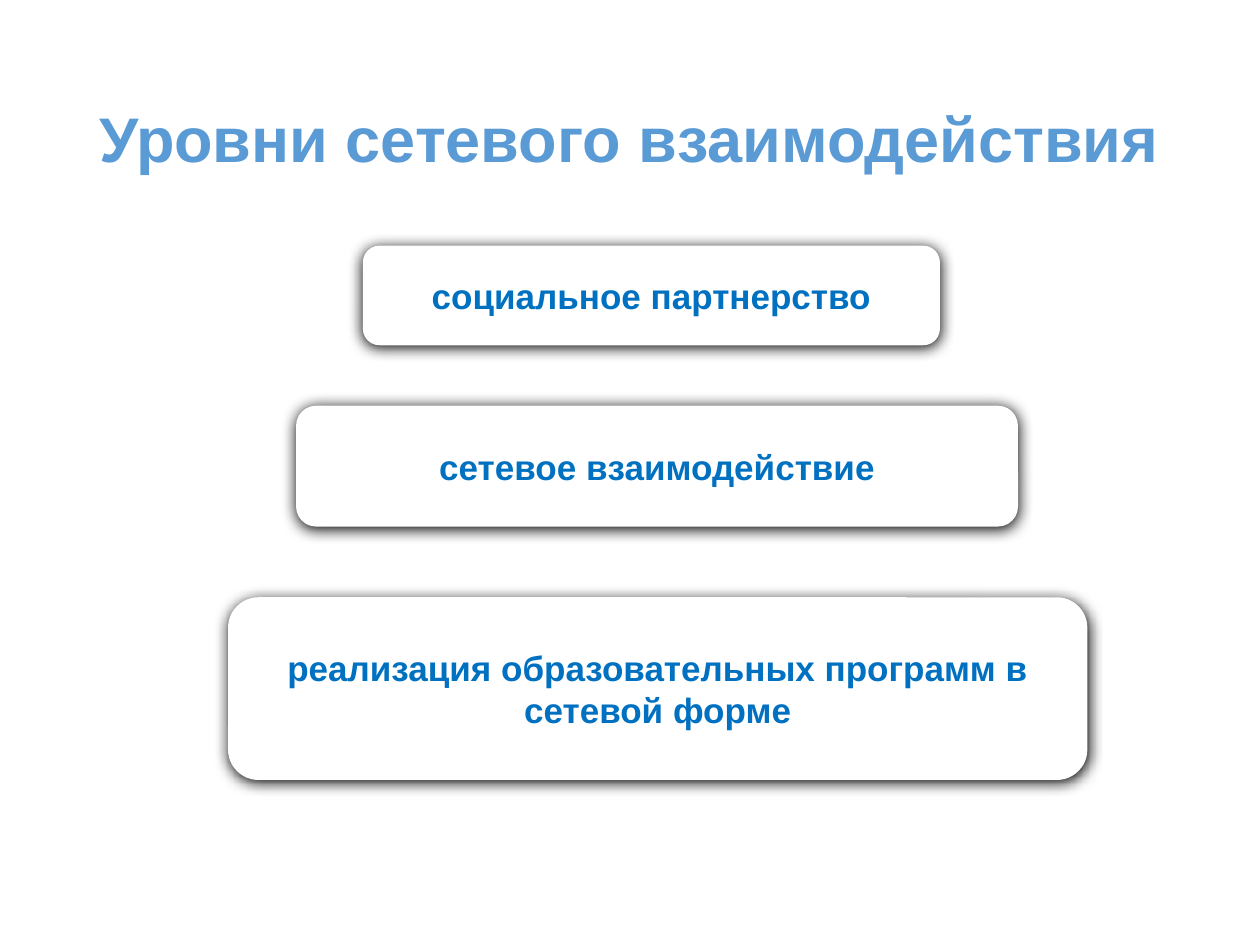
from lxml import etree
from pptx import Presentation
from pptx.dml.color import RGBColor
from pptx.enum.shapes import MSO_SHAPE as Shape
from pptx.enum.text import MSO_ANCHOR as Anchor, PP_ALIGN as Align
from pptx.oxml import parse_xml
from pptx.oxml.ns import nsdecls
from pptx.util import Inches, Pt

WHITE = RGBColor(0xFF, 0xFF, 0xFF)
TITLE_BLUE = RGBColor(0x5B, 0x9B, 0xD5)
LEVEL_BLUE = RGBColor(0x00, 0x70, 0xC0)

# Content: heading, then levels with left, top, width, height in inches
HEADING = "Уровни сетевого взаимодействия"
HEADING_BOX = (0.69, 0.4, 8.62, 1.45)
LEVELS = [
    ("социальное партнерство", (2.88, 1.95, 4.58, 0.79)),
    ("сетевое взаимодействие", (2.35, 3.22, 5.73, 0.96)),
    ("реализация образовательных программ в сетевой форме",
     (1.81, 4.74, 6.82, 1.45)),
]
HEADING_FONT = {"name": "Arial", "size": Pt(36), "bold": True}
LEVEL_FONT = {"name": "Arial", "size": Pt(20), "bold": True}

SHADOW = (
    f'<a:effectLst {nsdecls("a")}>'
    f'<a:outerShdw blurRad="{Pt(8.5)}" dist="{Pt(1)}" dir="5400000" '
    'algn="t" rotWithShape="0"><a:srgbClr val="000000"/></a:outerShdw>'
    '</a:effectLst>'
)


def write_text(shape, text, font_values, color, align):
    frame = shape.text_frame
    frame.word_wrap = True
    frame.vertical_anchor = Anchor.MIDDLE
    paragraph = frame.paragraphs[0]
    paragraph.alignment = align
    run = paragraph.add_run()
    run.text = text
    for name, value in font_values.items():
        setattr(run.font, name, value)
    run.font.color.rgb = color
    return paragraph


def add_level(slide, text, box):
    level = slide.shapes.add_shape(Shape.ROUNDED_RECTANGLE, *map(Inches, box))
    level.fill.solid()
    level.fill.fore_color.rgb = WHITE
    level.line.fill.background()
    level._element.spPr.append(parse_xml(SHADOW))
    write_text(level, text, LEVEL_FONT, LEVEL_BLUE, Align.CENTER)


def main():
    deck = Presentation()
    deck.slide_width, deck.slide_height = Inches(10), Inches(7.5)
    slide = deck.slides.add_slide(deck.slide_layouts[6])

    # Heading
    heading = slide.shapes.add_textbox(*map(Inches, HEADING_BOX))
    line = write_text(heading, HEADING, HEADING_FONT, TITLE_BLUE, Align.LEFT)
    line.line_spacing = 0.9

    # Levels, widening downwards
    for text, box in LEVELS:
        add_level(slide, text, box)

    deck.save("out.pptx")


if __name__ == "__main__":
    main()
